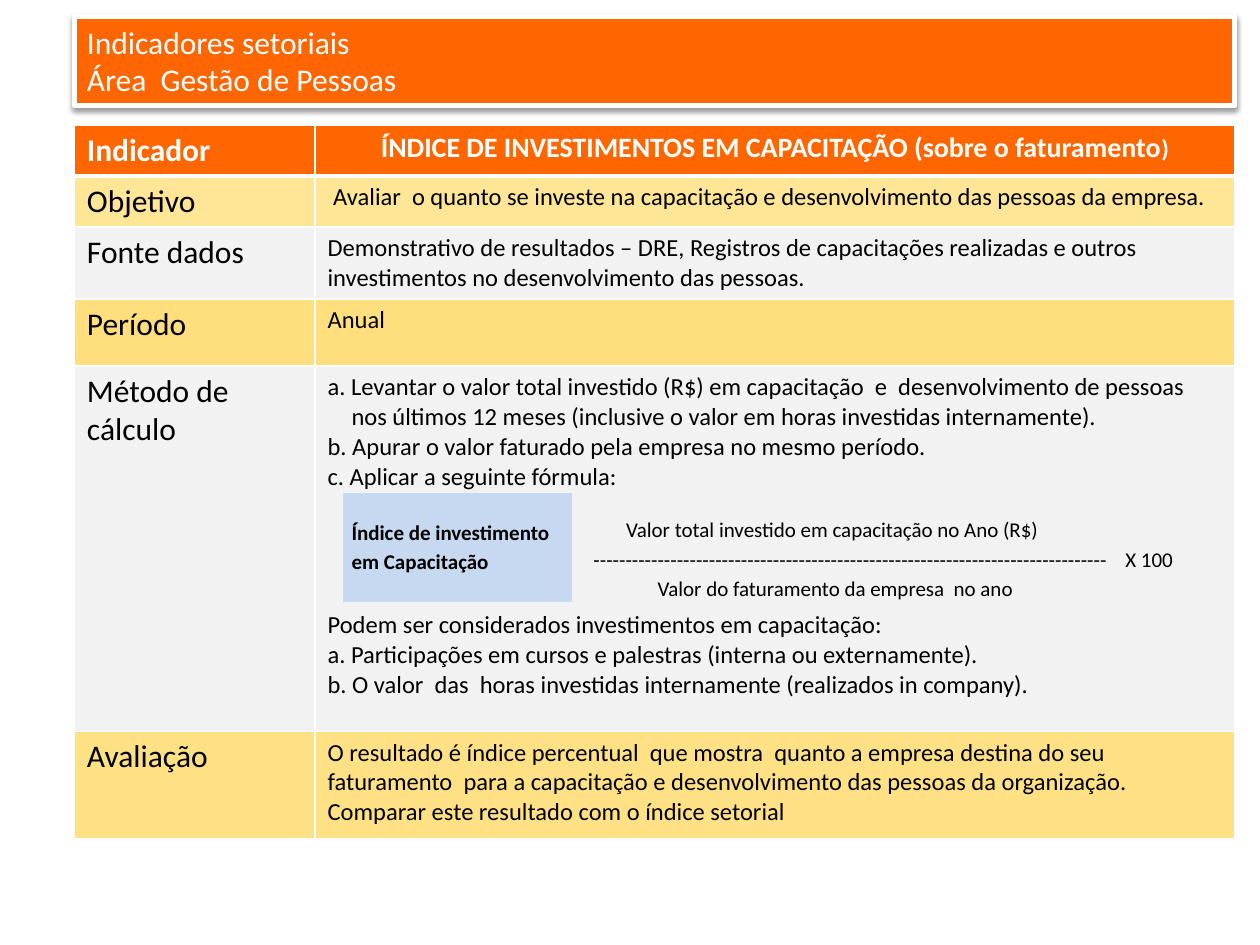
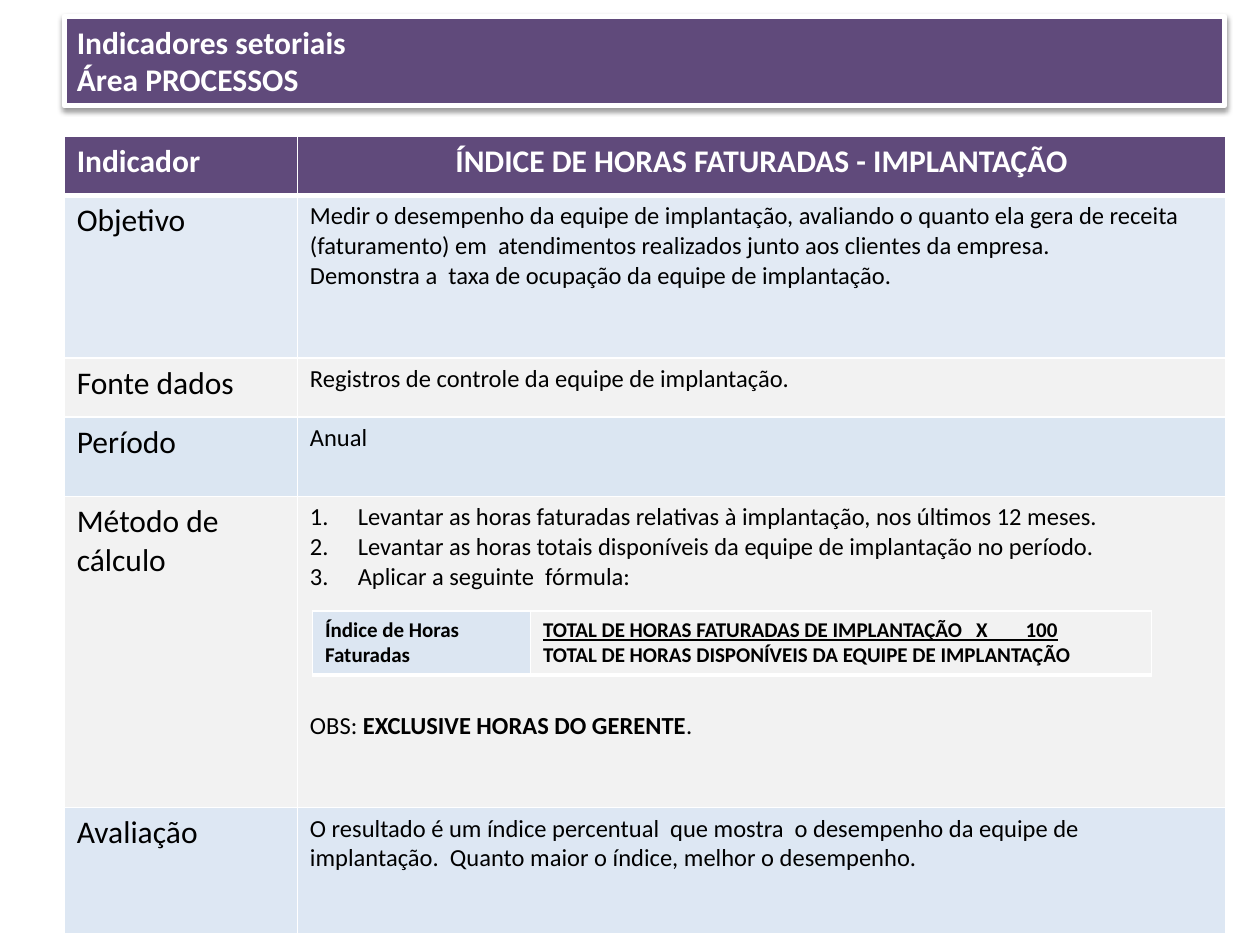
from pptx import Presentation
from pptx.dml.color import RGBColor
from pptx.enum.text import PP_ALIGN, MSO_ANCHOR
from pptx.oxml import parse_xml
from pptx.oxml.ns import nsdecls
from pptx.util import Inches, Pt

FONT = "Calibri"
WHITE, BLACK, GRAY = "FFFFFF", "000000", "F2F2F2"
PLAIN = "{2D5ABB26-0587-4C30-8999-92F81FD0307C}"
LABELS = ["Indicador", "Objetivo", "Fonte dados", "Período",
          "Método de cálculo", "Avaliação"]
SHARES = [1, 0.41, None, 0.51, None, 0.48]


def color(code):
    return RGBColor.from_string(code)


def tint(code, share):
    parts = [int(code[i:i + 2], 16) for i in (0, 2, 4)]
    return "".join(f"{round(255 - (255 - part) * share):02X}" for part in parts)


def paint(thing, code):
    thing.fill.solid()
    thing.fill.fore_color.rgb = color(code)


def line(text, bold=None, under=False, **style):
    runs = [(text, bold, under)] if isinstance(text, str) else text
    return {"runs": runs, **style}


def write(frame, lines, size, ink=BLACK, bold=False):
    for i, item in enumerate(lines):
        item = line(item) if isinstance(item, str) else item
        para = frame.paragraphs[0] if i == 0 else frame.add_paragraph()
        para.alignment = item.get("align", PP_ALIGN.LEFT)
        para.line_spacing = item.get("space", 1.0)
        para.space_before = Pt(item.get("before", 0))
        props = para._p.get_or_add_pPr()
        left, first = item.get("indent", (0, 0))
        props.set("marL", str(Inches(left)))
        props.set("indent", str(Inches(first)))
        if item.get("number"):
            props.append(parse_xml(
                f'<a:buAutoNum {nsdecls("a")} type="arabicPeriod"/>'))
        for text, heavy, under, *own in item["runs"]:
            run = para.add_run()
            run.text = text
            font = run.font
            font.name, font.size = FONT, Pt(own[0] if own else size)
            font.bold = bold if heavy is None else heavy
            font.underline = under
            font.color.rgb = color(ink)


def edge(cell, base=1):
    props = cell._tc.get_or_add_tcPr()
    for side, width in zip("LRTB", (1, 1, 1, base)):
        props.append(parse_xml(
            f'<a:ln{side} {nsdecls("a")} w="{Pt(width)}"><a:solidFill>'
            f'<a:srgbClr val="{WHITE}"/></a:solidFill></a:ln{side}>'))


def grid(slide, left, top, cols, rows):
    frame = slide.shapes.add_table(
        len(rows), len(cols), Inches(left), Inches(top),
        Inches(sum(cols)), Inches(sum(rows)))
    table = frame.table
    table.horz_banding = False
    table._tbl.tblPr.find(
        "{http://schemas.openxmlformats.org/drawingml/2006/main}tableStyleId"
    ).text = PLAIN
    for col, width in zip(table.columns, cols):
        col.width = Inches(width)
    for row, height in zip(table.rows, rows):
        row.height = Inches(height)
    return table


def banner(slide, left, hue, lines, bold):
    title = slide.shapes.title
    title.left, title.top = Inches(left), Inches(0.13)
    title.width, title.height = Inches(9.21), Inches(0.71)
    paint(title, hue)
    title.line.color.rgb = color(WHITE)
    title.line.width = Pt(3)
    title._element.spPr.append(parse_xml(
        f'<a:effectLst {nsdecls("a")}><a:outerShdw blurRad="{Pt(3.1)}" '
        f'dist="{Pt(1.6)}" dir="5400000" rotWithShape="0"><a:srgbClr val="{BLACK}">'
        '<a:alpha val="38000"/></a:srgbClr></a:outerShdw></a:effectLst>'))
    frame = title.text_frame
    frame.word_wrap = True
    frame.vertical_anchor = MSO_ANCHOR.TOP
    write(frame, lines, 18, WHITE, bold)


def sheet(slide, left, top, cols, rows, hue, band, texts):
    table = grid(slide, left, top, cols, rows)
    for r, (label, share, text) in enumerate(zip(LABELS, SHARES, texts)):
        head = r == 0
        shade = hue if head else tint(band, share) if share else GRAY
        for c, lines in enumerate(([label], text)):
            cell = table.cell(r, c)
            edge(cell, 3 if head else 1)
            paint(cell, shade)
            size = 14 if c and not head else 18
            write(cell.text_frame, lines, size, WHITE if head else BLACK, head)


def ratio(slide, left, top, cols, height, shade, name, lines, bold,
          pads=None, border=False):
    table = grid(slide, left, top, cols, [height])
    for c, text in enumerate(([name], lines)):
        cell = table.cell(0, c)
        if pads:
            cell.margin_left = cell.margin_right = Inches(0.07)
            cell.margin_top, cell.margin_bottom = Inches(pads[c]), 0
        if border:
            edge(cell, 3)
        if c:
            cell.fill.background()
        else:
            paint(cell, shade)
        write(cell.text_frame, text, 12, bold=bold or c == 0)


def people(slide):
    left, hue = 0.59, "FF6600"
    sheet(slide, left, 0.99, [1.91, 7.3], [0.39, 0.4, 0.57, 0.53, 2.9, 0.85],
          hue, "FFC000", [
        [line([("ÍNDICE DE INVESTIMENTOS EM CAPACITAÇÃO (sobre o faturamento",
                True, False, 16), (")", True, False, 14)],
              align=PP_ALIGN.CENTER)],
        [" Avaliar  o quanto se investe na capacitação e desenvolvimento das pessoas da empresa."],
        ["Demonstrativo de resultados – DRE, Registros de capacitações realizadas e outros investimentos no desenvolvimento das pessoas."],
        ["Anual"],
        [line("a. Levantar o valor total investido (R$) em capacitação  e  desenvolvimento de pessoas nos últimos 12 meses (inclusive o valor em horas investidas internamente).",
              indent=(0.19, -0.19)),
         "b. Apurar o valor faturado pela empresa no mesmo período.",
         "c. Aplicar a seguinte fórmula:",
         line("Podem ser considerados investimentos em capacitação:", before=68),
         "a. Participações em cursos e palestras (interna ou externamente).",
         "b. O valor  das  horas investidas internamente (realizados in company)."],
        ["O resultado é índice percentual  que mostra  quanto a empresa destina do seu faturamento  para a capacitação e desenvolvimento das pessoas da organização.",
         "Comparar este resultado com o índice setorial"]])
    banner(slide, left, hue,
           ["Indicadores setoriais", "Área  Gestão de Pessoas"], False)
    ratio(slide, 2.72, 3.91, [1.82, 4.95], 0.86, "C6D9F1",
          line("Índice de investimento em Capacitação", space=1.15),
          [line("Valor total investido em capacitação no Ano (R$)",
                space=1.15, indent=(0.36, 0)),
           line("-" * 80 + "    X 100", space=1.15, align=PP_ALIGN.CENTER),
           line("Valor do faturamento da empresa  no ano",
                space=1.15, indent=(0.61, 0))],
          False, pads=(0.19, 0.17))


def process(slide):
    left, hue = 0.51, "604A7B"
    steps = ["Levantar as horas faturadas relativas à implantação, nos últimos 12 meses.",
             "Levantar as horas totais disponíveis da equipe de implantação no período.",
             "Aplicar a seguinte  fórmula:"]
    sheet(slide, left, 1.08, [1.85, 7.37], [0.47, 1.29, 0.47, 0.63, 2.47, 1],
          hue, "B9CDE5", [
        [line("ÍNDICE DE HORAS FATURADAS - IMPLANTAÇÃO", align=PP_ALIGN.CENTER)],
        ["Medir o desempenho da equipe de implantação, avaliando o quanto ela gera de receita (faturamento) em  atendimentos realizados junto aos clientes da empresa.",
         "Demonstra a  taxa de ocupação da equipe de implantação."],
        ["Registros de controle da equipe de implantação."],
        ["Anual"],
        [line(step, indent=(0.38, -0.38), number=True) for step in steps]
        + [line([("OBS: ", False, False),
                 ("EXCLUSIVE HORAS DO GERENTE", True, False),
                 (".", False, False)], before=68)],
        ["O resultado é um índice percentual  que mostra  o desempenho da equipe de implantação.  Quanto maior o índice, melhor o desempenho."]])
    banner(slide, left, hue, ["Indicadores setoriais", "Área PROCESSOS"], True)
    ratio(slide, 2.48, 4.85, [1.73, 4.93], 0.5, "DCE6F2",
          "Índice de Horas Faturadas",
          [line("TOTAL DE HORAS FATURADAS DE IMPLANTAÇÃO   X        100",
                under=True),
           "TOTAL DE HORAS DISPONÍVEIS DA EQUIPE DE IMPLANTAÇÃO"],
          True, border=True)


def main():
    deck = Presentation()
    deck.slide_width, deck.slide_height = Inches(10), Inches(7.5)
    for build in (people, process):
        build(deck.slides.add_slide(deck.slide_layouts[5]))
    deck.save("out.pptx")


if __name__ == "__main__":
    main()
